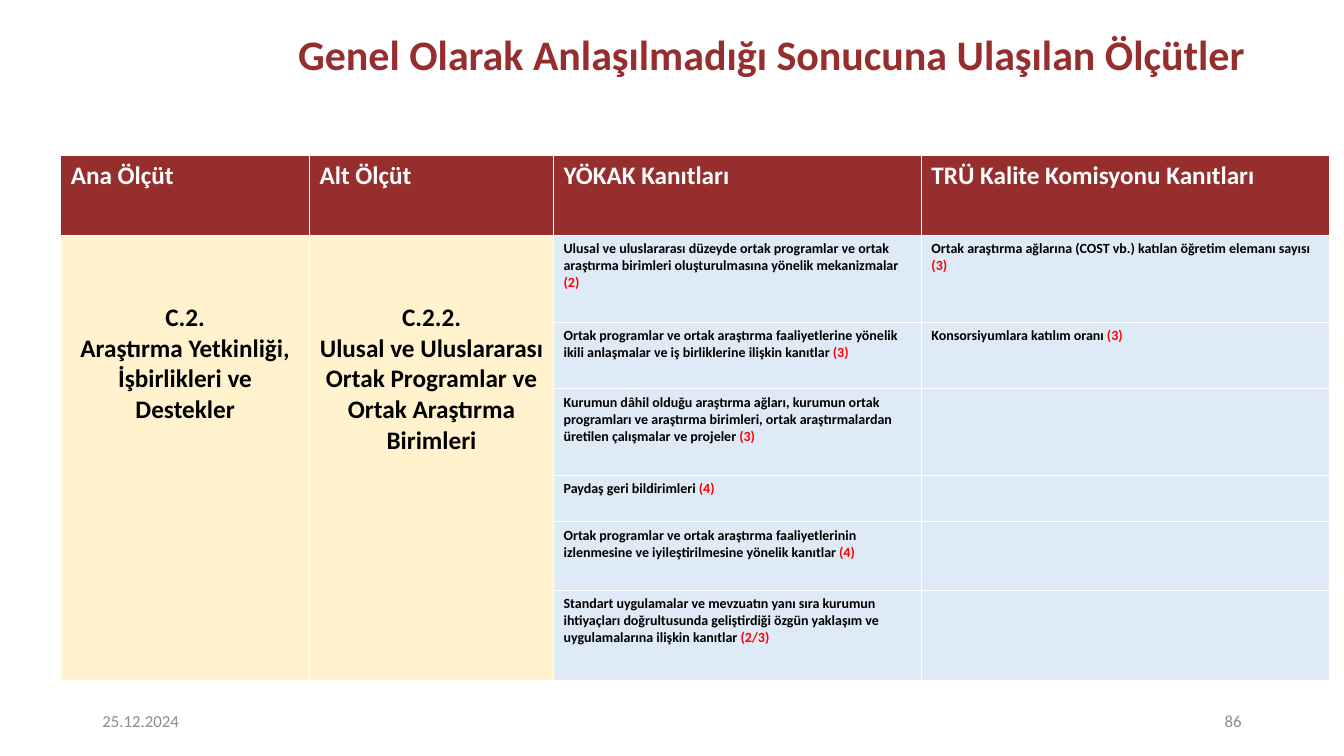
from pptx import Presentation
from pptx.dml.color import RGBColor
from pptx.enum.text import MSO_ANCHOR, PP_ALIGN
from pptx.util import Cm, Pt

LEFT, MID, RIGHT = PP_ALIGN.LEFT, PP_ALIGN.CENTER, PP_ALIGN.RIGHT
CENTRE = MSO_ANCHOR.MIDDLE

FONT = "Calibri"
MAROON, WHITE, BLACK, RED, GREY = "962E2E", "FFFFFF", "000000", "FF0000", "8C8C8C"
CREAM, BLUE = "FFF2CC", "DEEBF7"

TITLE = "Genel Olarak Anlaşılmadığı Sonucuna Ulaşılan Ölçütler"
HEADS = ["Ana Ölçüt", "Alt Ölçüt", "YÖKAK Kanıtları", "TRÜ Kalite Komisyonu Kanıtları"]
GROUPS = [
    "C.2.\nAraştırma Yetkinliği, İşbirlikleri ve Destekler",
    "C.2.2.\nUlusal ve Uluslararası Ortak Programlar ve Ortak Araştırma Birimleri",
]
# Each item of proof is a text and its maturity level
PROOFS = [
    [
        ("Ulusal ve uluslararası düzeyde ortak programlar ve ortak araştırma "
         "birimleri oluşturulmasına yönelik mekanizmalar ", "(2)"),
        ("Ortak programlar ve ortak araştırma faaliyetlerine yönelik ikili "
         "anlaşmalar ve iş birliklerine ilişkin kanıtlar ", "(3)"),
        ("Kurumun dâhil olduğu araştırma ağları, kurumun ortak programları ve "
         "araştırma birimleri, ortak araştırmalardan üretilen çalışmalar ve "
         "projeler ", "(3)"),
        ("Paydaş geri bildirimleri ", "(4)"),
        ("Ortak programlar ve ortak araştırma faaliyetlerinin izlenmesine ve "
         "iyileştirilmesine yönelik kanıtlar ", "(4)"),
        ("Standart uygulamalar ve mevzuatın yanı sıra kurumun ihtiyaçları "
         "doğrultusunda geliştirdiği özgün yaklaşım ve uygulamalarına ilişkin "
         "kanıtlar ", "(2/3)"),
    ],
    [
        ("Ortak araştırma ağlarına (COST vb.) katılan öğretim elemanı sayısı ", "(3)"),
        ("Konsorsiyumlara katılım oranı ", "(3)"),
    ],
]
WIDTHS = [6.27, 6.15, 9.27, 10.29]
HEIGHTS = [2.03, 2.18, 1.68, 2.18, 1.17, 1.73, 2.26]


def rgb(code):
    return RGBColor.from_string(code)


def style(run, size, color, bold=True):
    font = run.font
    font.name, font.size, font.bold = FONT, Pt(size), bold
    font.color.rgb = rgb(color)


def write(frame, text, size, color, align=LEFT, bold=True):
    frame.text = text
    frame.word_wrap = True
    for para in frame.paragraphs:
        para.alignment = align
        for run in para.runs:
            style(run, size, color, bold)


def add_title(slide):
    title = slide.shapes.title
    title.left, title.top = Cm(4.67), Cm(0.38)
    title.width, title.height = Cm(29.57), Cm(2.13)
    frame = title.text_frame
    write(frame, TITLE, 30, MAROON, MID)
    frame.vertical_anchor = CENTRE
    frame.paragraphs[0].line_spacing = 0.9


def add_foot(slide, left, text, align):
    box = slide.shapes.add_textbox(Cm(left), Cm(17.65), Cm(7.62), Cm(1.02))
    write(box.text_frame, text, 12, GREY, align, False)
    box.text_frame.vertical_anchor = CENTRE


def add_proof(cell, text, level):
    write(cell.text_frame, text, 10, BLACK)
    run = cell.text_frame.paragraphs[0].add_run()
    run.text = level
    style(run, 10, RED)


def paint(cell, color):
    cell.fill.solid()
    cell.fill.fore_color.rgb = rgb(color)


def add_grid(slide):
    rows, cols = len(HEIGHTS), len(WIDTHS)
    frame = slide.shapes.add_table(
        rows, cols, Cm(1.53), Cm(3.91), Cm(sum(WIDTHS)), Cm(sum(HEIGHTS)))
    table = frame.table
    table.horz_banding = False
    for col, width in zip(table.columns, WIDTHS):
        col.width = Cm(width)
    for row, height in zip(table.rows, HEIGHTS):
        row.height = Cm(height)

    for c, head in enumerate(HEADS):
        write(table.cell(0, c).text_frame, head, 18, WHITE)
        paint(table.cell(0, c), MAROON)
        for r in range(1, rows):
            paint(table.cell(r, c), CREAM if c < len(GROUPS) else BLUE)

    for c, group in enumerate(GROUPS):
        cell = table.cell(1, c)
        cell.merge(table.cell(rows - 1, c))
        cell.margin_top = Cm(1.68)
        write(cell.text_frame, group, 18, BLACK, MID)

    for c, proofs in enumerate(PROOFS, len(GROUPS)):
        for r, (text, level) in enumerate(proofs, 1):
            add_proof(table.cell(r, c), text, level)


def main():
    deck = Presentation()
    deck.slide_width, deck.slide_height = Cm(33.87), Cm(19.05)
    slide = deck.slides.add_slide(deck.slide_layouts[5])
    add_title(slide)
    add_grid(slide)
    add_foot(slide, 2.33, "25.12.2024", LEFT)
    add_foot(slide, 23.92, "86", RIGHT)
    deck.save("out.pptx")


if __name__ == "__main__":
    main()
